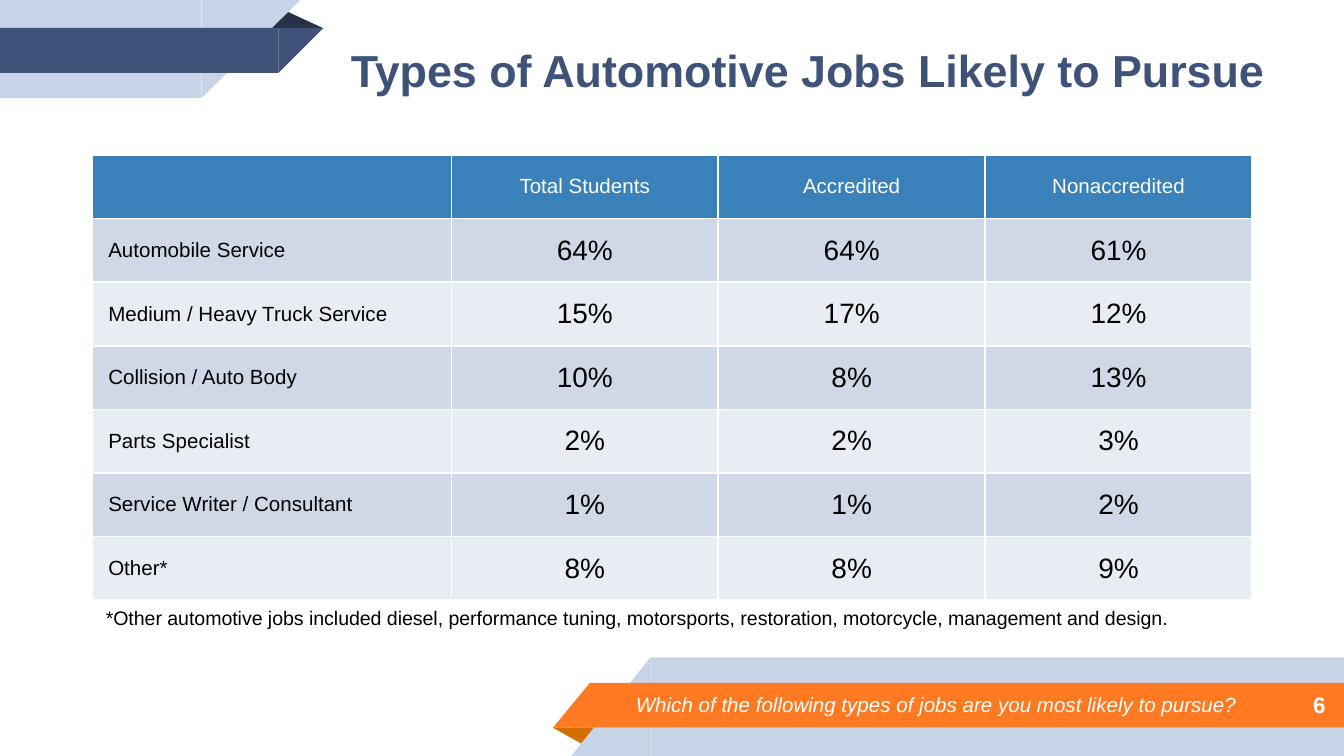
from lxml.etree import SubElement
from pptx import Presentation
from pptx.dml.color import RGBColor
from pptx.enum.shapes import MSO_SHAPE as Shape
from pptx.enum.text import MSO_ANCHOR as Anchor, MSO_AUTO_SIZE as AutoSize, PP_ALIGN as Align
from pptx.oxml.ns import qn
from pptx.util import Pt

WHITE = RGBColor(0xFF, 0xFF, 0xFF)
BLACK = RGBColor(0, 0, 0)
NAVY = RGBColor(0x3F, 0x53, 0x78)
DARK_NAVY = RGBColor(0x26, 0x32, 0x48)
PALE_BLUE = RGBColor(0xC7, 0xD3, 0xE6)
ORANGE = RGBColor(0xFD, 0x7A, 0x22)
DARK_ORANGE = RGBColor(0xD2, 0x6F, 0x00)
HEADER_BLUE = RGBColor(0x3A, 0x81, 0xBA)
BANDS = RGBColor(0xCE, 0xD8, 0xE7), RGBColor(0xE8, 0xED, 0xF3)

WIDTH, HEIGHT = 720, 405
FOLD_TIP = 0.324

HEADINGS = ["", "Total Students", "Accredited", "Nonaccredited"]
JOBS = [
    ("Automobile Service", "64%", "64%", "61%"),
    ("Medium / Heavy Truck Service", "15%", "17%", "12%"),
    ("Collision / Auto Body", "10%", "8%", "13%"),
    ("Parts Specialist", "2%", "2%", "3%"),
    ("Service Writer / Consultant", "1%", "1%", "2%"),
    ("Other*", "8%", "8%", "9%"),
]
COLUMN_WIDTHS = [192.2, 143, 143, 143]
ROW_HEIGHT = 34.1


def write(frame, text, size, color=BLACK, bold=False, italic=False, align=Align.LEFT):
    para = frame.paragraphs[0]
    para.alignment = align
    para.space_before = Pt(0)
    span = para.add_run()
    span.text = text
    font = span.font
    font.name, font.size, font.bold, font.italic = "Arial", Pt(size), bold, italic
    font.color.rgb = color
    return para


def remove_bullet(para):
    properties = para._p.get_or_add_pPr()
    properties.set("marL", "0")
    properties.set("indent", "0")
    SubElement(properties, qn("a:buNone"))


def set_borders(cell, color, width):
    properties = cell._tc.get_or_add_tcPr()
    for position, side in enumerate(("a:lnL", "a:lnR", "a:lnT", "a:lnB")):
        line = SubElement(properties, qn(side), w=str(Pt(width)))
        fill = SubElement(line, qn("a:solidFill"))
        SubElement(fill, qn("a:srgbClr"), val=str(color))
        properties.insert(position, line)


class SlideBuilder:
    def __init__(self, page):
        self.page = page

    def shape(self, kind, left, top, width, height, color, flip=None, rotation=0, tip=None):
        box = self.page.shapes.add_shape(kind, Pt(left), Pt(top), Pt(width), Pt(height))
        box.shadow.inherit = False
        box.fill.solid()
        box.fill.fore_color.rgb = color
        box.line.fill.background()
        box.rotation = rotation
        if tip is not None:
            box.adjustments[0] = tip
        if flip:
            box._element.spPr.xfrm.set(flip, "1")

    def left_ribbon(self, top, width, slant, height, color):
        """Bar from the left edge whose right end slants back downwards."""
        self.shape(Shape.RECTANGLE, 0, top, width, height, color)
        self.shape(Shape.RIGHT_TRIANGLE, width, top, slant, height, color, flip="flipV")

    def right_ribbon(self, left, top, slant, height, color):
        """Bar to the right edge whose left end slants outwards downwards."""
        self.shape(Shape.RECTANGLE, left, top, WIDTH - left, height, color)
        self.shape(Shape.RIGHT_TRIANGLE, left - slant, top, slant, height, color, flip="flipH")

    def placeholder(self, index, left, top, width, height, text, **style):
        box = self.page.placeholders[index]
        self.page.shapes._spTree.append(box._element)  # in front of the ribbons
        box.left, box.top, box.width, box.height = Pt(left), Pt(top), Pt(width), Pt(height)
        return self.fill_box(box, text, Anchor.MIDDLE, 7.2, **style)

    def text(self, left, top, width, height, text, anchor=Anchor.TOP, inset=3.6, **style):
        box = self.page.shapes.add_textbox(Pt(left), Pt(top), Pt(width), Pt(height))
        return self.fill_box(box, text, anchor, inset, **style)

    def fill_box(self, box, text, anchor, inset, **style):
        frame = box.text_frame
        frame.word_wrap = True
        frame.auto_size = AutoSize.NONE
        frame.vertical_anchor = anchor
        frame.margin_left = frame.margin_right = Pt(7.2)
        frame.margin_top = frame.margin_bottom = Pt(inset)
        return write(frame, text, **style)

    def table(self, left, top, rows):
        table = self.page.shapes.add_table(
            len(rows), len(COLUMN_WIDTHS), Pt(left), Pt(top),
            Pt(sum(COLUMN_WIDTHS)), Pt(ROW_HEIGHT * len(rows))).table
        for column, width in zip(table.columns, COLUMN_WIDTHS):
            column.width = Pt(width)
        for r, values in enumerate(rows):
            table.rows[r].height = Pt(ROW_HEIGHT)
            for c, value in enumerate(values):
                self.cell(table.cell(r, c), value, header=r == 0, label=c == 0,
                          fill=BANDS[(r - 1) % 2] if r else HEADER_BLUE)

    def cell(self, cell, value, header, label, fill):
        cell.fill.solid()
        cell.fill.fore_color.rgb = fill
        set_borders(cell, WHITE, 1)
        cell.vertical_anchor = Anchor.MIDDLE
        cell.margin_left = Pt(8.4 if label else 5.4)
        cell.margin_right = Pt(5.4)
        cell.margin_top = cell.margin_bottom = Pt(2.7)
        if value:
            write(cell.text_frame, value, size=11 if header or label else 15,
                  color=WHITE if header else BLACK,
                  align=Align.LEFT if label else Align.CENTER)


def main():
    deck = Presentation()
    deck.slide_width, deck.slide_height = Pt(WIDTH), Pt(HEIGHT)
    slide = SlideBuilder(deck.slides.add_slide(deck.slide_layouts[1]))

    slide.shape(Shape.ISOSCELES_TRIANGLE, 296, 389.7, 25, 9.5, DARK_ORANGE,
                rotation=180, tip=FOLD_TIP)
    slide.right_ribbon(348.5, 352.2, 42.5, 52.8, PALE_BLUE)
    slide.right_ribbon(316, 365.9, 19.5, 23.8, ORANGE)

    slide.shape(Shape.ISOSCELES_TRIANGLE, 142.3, 5.5, 31, 9.7, DARK_NAVY, tip=FOLD_TIP)
    slide.left_ribbon(0, 108, 52.8, 52.6, PALE_BLUE)
    slide.left_ribbon(15, 149.3, 24, 24, NAVY)

    question = slide.placeholder(
        1, 333.4, 365, 350.6, 25.2,
        "Which of the following types of jobs are you most likely to pursue?",
        size=11, color=WHITE, italic=True)
    remove_bullet(question)
    slide.text(599.8, 365, 117.4, 25.2, "6", anchor=Anchor.MIDDLE, inset=7.2,
               size=12, color=WHITE, bold=True, align=Align.RIGHT)
    slide.placeholder(0, 180.7, 7.2, 520.6, 60.5, "Types of Automotive Jobs Likely to Pursue",
                      size=24, color=NAVY, bold=True)

    slide.table(49.6, 83, [HEADINGS, *JOBS])
    slide.text(49.6, 321.2, 621.2, 20.2,
               "*Other automotive jobs included diesel, performance tuning, motorsports, "
               "restoration, motorcycle, management and design.", size=10.5)

    deck.save("out.pptx")


if __name__ == "__main__":
    main()
